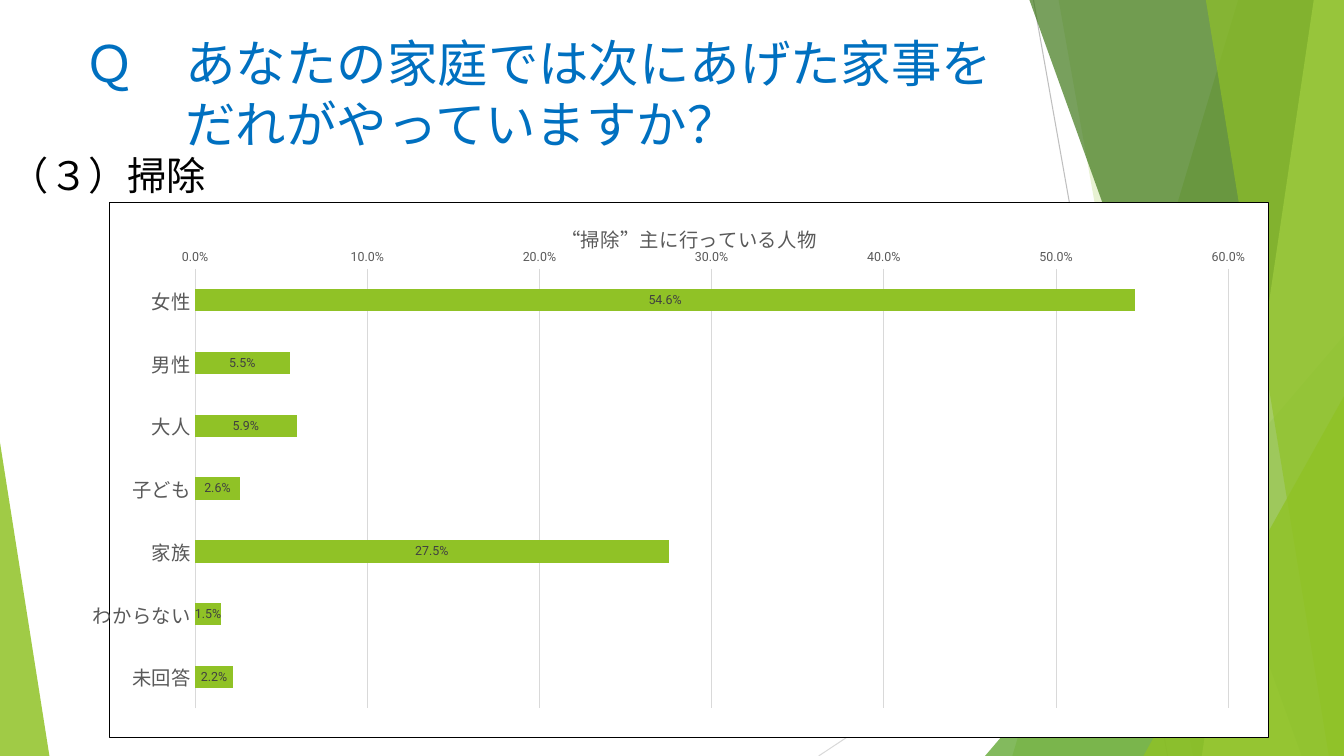
from lxml import etree
from pptx import Presentation
from pptx.chart.data import CategoryChartData
from pptx.dml.color import RGBColor
from pptx.enum.chart import XL_AXIS_CROSSES as Crosses
from pptx.enum.chart import XL_CHART_TYPE as ChartType
from pptx.enum.chart import XL_LABEL_POSITION as LabelPos
from pptx.enum.chart import XL_TICK_MARK as Tick
from pptx.enum.shapes import MSO_CONNECTOR as Connector
from pptx.enum.shapes import MSO_SHAPE as Shape
from pptx.enum.text import MSO_ANCHOR as Anchor
from pptx.enum.text import MSO_AUTO_SIZE as AutoSize
from pptx.enum.text import PP_ALIGN as Align
from pptx.oxml import parse_xml
from pptx.oxml.ns import qn
from pptx.util import Inches, Pt

C = {"lime": "90C226", "green": "54A021", "forest": "3F7819", "pale": "C0E474",
     "blue": "0070C0", "black": "000000", "white": "FFFFFF", "silver": "BFBFBF",
     "grid": "D9D9D9", "grey": "595959", "label": "404040"}
W, H = 13.33, 7.5


def style_font(font, size, color, name="Roboto"):
    font.size = Pt(size)
    font.name = name
    font.bold = False
    font.color.rgb = RGBColor.from_string(C[color])


def fill_facet(facet, color, opacity):
    facet.shadow.inherit = False
    facet.line.fill.background()
    facet.fill.solid()
    facet.fill.fore_color.rgb = RGBColor.from_string(C[color])
    clr = facet.fill._xPr.find(".//" + qn("a:srgbClr"))
    etree.SubElement(clr, qn("a:alpha")).set("val", str(opacity * 1000))


prs = Presentation()
prs.slide_width, prs.slide_height = Inches(W), Inches(H)
s = prs.slides.add_slide(prs.slide_layouts[5])

for x1, y1, x2, y2, color in [(10.25, 0, 11.58, H, "silver"), (W, 4.03, 8.12, H, "grid")]:
    ray = s.shapes.add_connector(Connector.STRAIGHT, Inches(x1), Inches(y1), Inches(x2), Inches(y2))
    ray.line.color.rgb = RGBColor.from_string(C[color])
    ray.line.width = Pt(0.75)
    etree.SubElement(ray._element.spPr, qn("a:effectLst"))

facets = [
    ("band", 12.28, 10.04, "lime", 30),
    ("band", 10.5, 11.83, "lime", 20),
    ("corner", 9.77, 3.33, "green", 72),
    ("band", 10.21, 12.91, "forest", 70),
    ("band", 13.03, 11.92, "pale", 70),
    ("band", 11.96, 13.18, "lime", 65),
    ("corner", 11.34, 3.93, "lime", 80),
]
for kind, a, b, color, opacity in facets:
    if kind == "band":
        fb = s.shapes.build_freeform(Inches(a), 0)
        fb.add_line_segments([(Inches(x), Inches(y)) for x, y in [(W, 0), (W, H), (b, H)]])
        facet = fb.convert_to_shape()
    else:
        facet = s.shapes.add_shape(Shape.ISOSCELES_TRIANGLE, Inches(a), Inches(b),
                                   Inches(W - a), Inches(H - b))
        facet.adjustments[0] = 1
    fill_facet(facet, color, opacity)

left = s.shapes.add_shape(Shape.ISOSCELES_TRIANGLE, 0, Inches(4.39), Inches(0.49), Inches(3.11))
left.adjustments[0] = 0
fill_facet(left, "lime", 85)

title = s.shapes.title
title.element.getparent().append(title.element)
title.left, title.top, title.width, title.height = [Inches(v) for v in (0.74, 0.27, 10.48, 1.44)]
tf = title.text_frame
tf.text = "Ｑ　あなたの家庭では次にあげた家事を\vだれがやっていますか？"
tf.word_wrap = True
tf.auto_size = AutoSize.NONE
tf.vertical_anchor = Anchor.TOP
p = tf.paragraphs[0]
p.alignment = Align.LEFT
style_font(p.font, 36, "blue")
pPr = p._p.get_or_add_pPr()
pPr.set("marL", str(Inches(1)))
pPr.set("indent", str(Inches(-1)))

tb = s.shapes.add_textbox(0, Inches(1.5), Inches(3.16), Inches(0.54))
tf = tb.text_frame
tf.word_wrap = True
p = tf.paragraphs[0]
p.text = "（３）掃除"
p.line_spacing = 0.9
p.space_before = Pt(10)
style_font(p.font, 28, "black", "Calibri")

data = CategoryChartData(number_format="0.0%")
data.categories = ["女性", "男性", "大人", "子ども", "家族", "わからない", "未回答"]
data.add_series("Series 1", [0.546, 0.055, 0.059, 0.026, 0.275, 0.015, 0.022])
chart = s.shapes.add_chart(ChartType.BAR_CLUSTERED, Inches(0.92), Inches(2),
                           Inches(11.67), Inches(5.32), data).chart
style_font(chart.font, 10, "black")
chart.has_legend = False
chart.has_title = True
tf = chart.chart_title.text_frame
tf.text = "“掃除”主に行っている人物"
style_font(tf.paragraphs[0].font, 14, "grey")
chart.chart_title.include_in_layout = False

cat = chart.category_axis
cat.reverse_order = True
cat.crosses = Crosses.MAXIMUM
cat.format.line.color.rgb = RGBColor.from_string(C["grid"])
cat.format.line.width = Pt(0.75)
style_font(cat.tick_labels.font, 14, "grey")

val = chart.value_axis
val.minimum_scale, val.maximum_scale, val.major_unit = 0, 0.6, 0.1
val.format.line.fill.background()
val.major_gridlines.format.line.color.rgb = RGBColor.from_string(C["grid"])
val.major_gridlines.format.line.width = Pt(0.75)
val.tick_labels.number_format = "0.0%"
val.tick_labels.number_format_is_linked = False
style_font(val.tick_labels.font, 9, "grey")
for axis in (cat, val):
    axis.major_tick_mark = axis.minor_tick_mark = Tick.NONE

plot = chart.plots[0]
plot.gap_width = 182
plot.vary_by_categories = False
bars = plot.series[0]
bars.format.fill.solid()
bars.format.fill.fore_color.rgb = RGBColor.from_string(C["lime"])
labels = bars.data_labels
labels.show_value = True
labels.position = LabelPos.CENTER
labels.number_format = "0.0%"
labels.number_format_is_linked = False
style_font(labels.font, 9, "label")

NS = ('xmlns:c="http://schemas.openxmlformats.org/drawingml/2006/chart" '
      'xmlns:a="http://schemas.openxmlformats.org/drawingml/2006/main"')
area = chart._chartSpace.chart.plotArea
for old in area.findall(qn("c:layout")):
    area.remove(old)
area.insert(0, parse_xml(
    f'<c:layout {NS}><c:manualLayout><c:layoutTarget val="inner"/>'
    '<c:xMode val="edge"/><c:yMode val="edge"/><c:x val="0.074"/><c:y val="0.125"/>'
    '<c:w val="0.891"/><c:h val="0.821"/></c:manualLayout></c:layout>'))
chart._chartSpace.chart.addnext(parse_xml(
    f'<c:spPr {NS}><a:solidFill><a:srgbClr val="{C["white"]}"/></a:solidFill>'
    f'<a:ln w="{Pt(0.75)}"><a:solidFill><a:srgbClr val="{C["black"]}"/></a:solidFill></a:ln></c:spPr>'))

prs.save("out.pptx")
